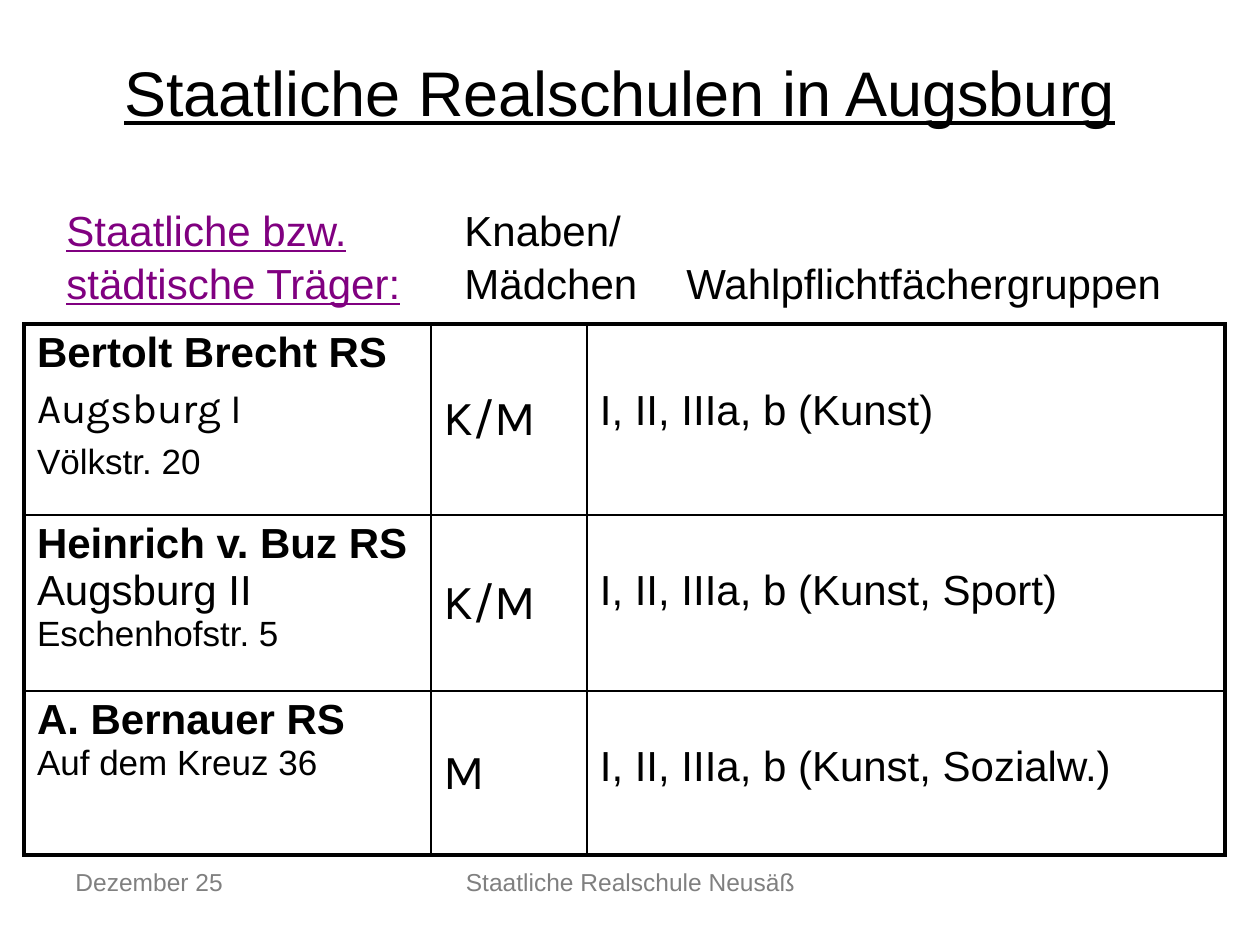
from dataclasses import dataclass

from lxml import etree
from pptx import Presentation
from pptx.dml.color import RGBColor
from pptx.enum.text import MSO_ANCHOR, PP_ALIGN
from pptx.oxml.ns import qn
from pptx.util import Pt

PX = 914400 / 126
LEFT, CENTER = PP_ALIGN.LEFT, PP_ALIGN.CENTER
TOP, MIDDLE, BOTTOM = MSO_ANCHOR.TOP, MSO_ANCHOR.MIDDLE, MSO_ANCHOR.BOTTOM


@dataclass(frozen=True)
class Theme:
    ink: str = "000000"
    accent: str = "800080"
    muted: str = "808080"
    font: str = "Arial"
    alt: str = "Karla"
    title: int = 36
    mark: int = 28
    body: int = 24
    small: int = 20
    foot: int = 14
    frame: float = 2.25
    rule: float = 1


T = Theme()


def px(n):
    return round(n * PX)


def write(par, text, size=T.body, font=T.font, color=T.ink, bold=False, line=False):
    run = par.add_run()
    run.text = text
    f = run.font
    f.size, f.name, f.bold, f.underline = Pt(size), font, bold, line
    f.color.rgb = RGBColor.from_string(color)


def border(cell, side, width):
    ln = etree.SubElement(cell._tc.get_or_add_tcPr(), qn("a:ln" + side))
    if not width:
        etree.SubElement(ln, qn("a:noFill"))
        return
    ln.set("w", str(Pt(width)))
    fill = etree.SubElement(ln, qn("a:solidFill"))
    etree.SubElement(fill, qn("a:srgbClr")).set("val", T.ink)


def set_tabs(par, stops):
    tabs = etree.SubElement(par._p.get_or_add_pPr(), qn("a:tabLst"))
    for stop in stops:
        tab = etree.SubElement(tabs, qn("a:tab"))
        tab.set("pos", str(px(stop)))
        tab.set("algn", "l")


class Deck:
    def __init__(self):
        self.prs = Presentation()
        self.prs.slide_width, self.prs.slide_height = px(1260), px(945)
        self.slide = self.prs.slides.add_slide(self.prs.slide_layouts[5])

    def title(self, text, x, y, w, h):
        box = self.slide.shapes.title
        box.left, box.top, box.width, box.height = map(px, (x, y, w, h))
        frame = box.text_frame
        frame.vertical_anchor = BOTTOM
        par = frame.paragraphs[0]
        par.alignment = CENTER
        write(par, text, size=T.title, line=True)

    def text(self, lines, x, y, w, h, align=LEFT, space=1.0, tabs=()):
        frame = self.slide.shapes.add_textbox(*map(px, (x, y, w, h))).text_frame
        frame.word_wrap = True
        self.fill(frame, lines, align, space=space, tabs=tabs)

    def fill(self, frame, lines, align=LEFT, gap=0, space=1.0, tabs=()):
        for i, runs in enumerate(lines):
            par = frame.add_paragraph() if i else frame.paragraphs[0]
            par.alignment, par.line_spacing = align, space
            par.space_before = Pt(gap if i else 0)
            if tabs:
                set_tabs(par, tabs)
            for text, style in runs:
                write(par, text, **style)

    def table(self, x, y, cols, rows):
        shape = self.slide.shapes.add_table(
            len(rows), len(cols), px(x), px(y), px(sum(cols)),
            px(sum(row["high"] for row in rows)))
        grid = shape.table
        grid.first_row = grid.horz_banding = False
        for c, wide in enumerate(cols):
            grid.columns[c].width = px(wide)
        for r, row in enumerate(rows):
            grid.rows[r].height = px(row["high"])
            marks = [[(row["who"], dict(size=T.mark, font=T.alt))]]
            groups = [[(row["groups"], {})]]
            for c, lines in enumerate((row["school"], marks, groups, [])):
                cell = grid.cell(r, c)
                self.edges(cell, r, c, len(rows) - 1, len(cols) - 1)
                cell.fill.background()
                cell.margin_left = cell.margin_right = px(13)
                cell.margin_top = px(row["drop"] if c == 2 else 6)
                cell.margin_bottom = px(6)
                cell.vertical_anchor = MIDDLE if c == 1 else TOP
                self.fill(cell.text_frame, lines, gap=row["gap"])

    def edges(self, cell, r, c, last_r, last_c):
        # The last two columns read as one: no rule between them
        border(cell, "L", 0 if c == last_c else T.rule if c else T.frame)
        border(cell, "R", T.frame if c == last_c else 0 if c == last_c - 1 else T.rule)
        border(cell, "T", T.rule if r else T.frame)
        border(cell, "B", T.frame if r == last_r else T.rule)


def main():
    deck = Deck()
    bold, small = dict(bold=True), dict(size=T.small)
    head = dict(color=T.accent, line=True)

    # Title
    deck.title("Staatliche Realschulen in Augsburg", 55, 32, 1130, 103)

    # Column heads
    deck.text([
        [("Staatliche bzw.", head), ("\tKnaben/", {})],
        [("städtische Träger:", head),
         ("\tMädchen\tWahlpflichtfächergruppen", {})],
    ], 54, 195, 1206, 115, space=1.06, tabs=(398, 620))

    # Schools
    deck.table(24, 324, (407, 156, 570, 68), [
        dict(high=191, drop=64, gap=4.8, who="K/M",
             groups="I, II, IIIa, b (Kunst)",
             school=[[("Bertolt Brecht RS", bold)],
                     [("Augsburg I", dict(font=T.alt))],
                     [("Völkstr. 20", small)]]),
        dict(high=176, drop=53, gap=0, who="K/M",
             groups="I, II, IIIa, b (Kunst, Sport)",
             school=[[("Heinrich v. Buz RS", bold), (" Augsburg II", {})],
                     [("Eschenhofstr. 5", small)]]),
        dict(high=164, drop=53, gap=0, who="M",
             groups="I, II, IIIa, b (Kunst, Sozialw.)",
             school=[[("A. Bernauer RS", bold)],
                     [("Auf dem Kreuz 36", small)]]),
    ])

    # Footer
    foot = dict(size=T.foot, color=T.muted)
    deck.text([[("Dezember 25", foot)]], 63, 861, 294, 66)
    deck.text([[("Staatliche Realschule Neusäß", foot)]], 431, 861, 399, 66, CENTER)

    deck.prs.save("out.pptx")


if __name__ == "__main__":
    main()
